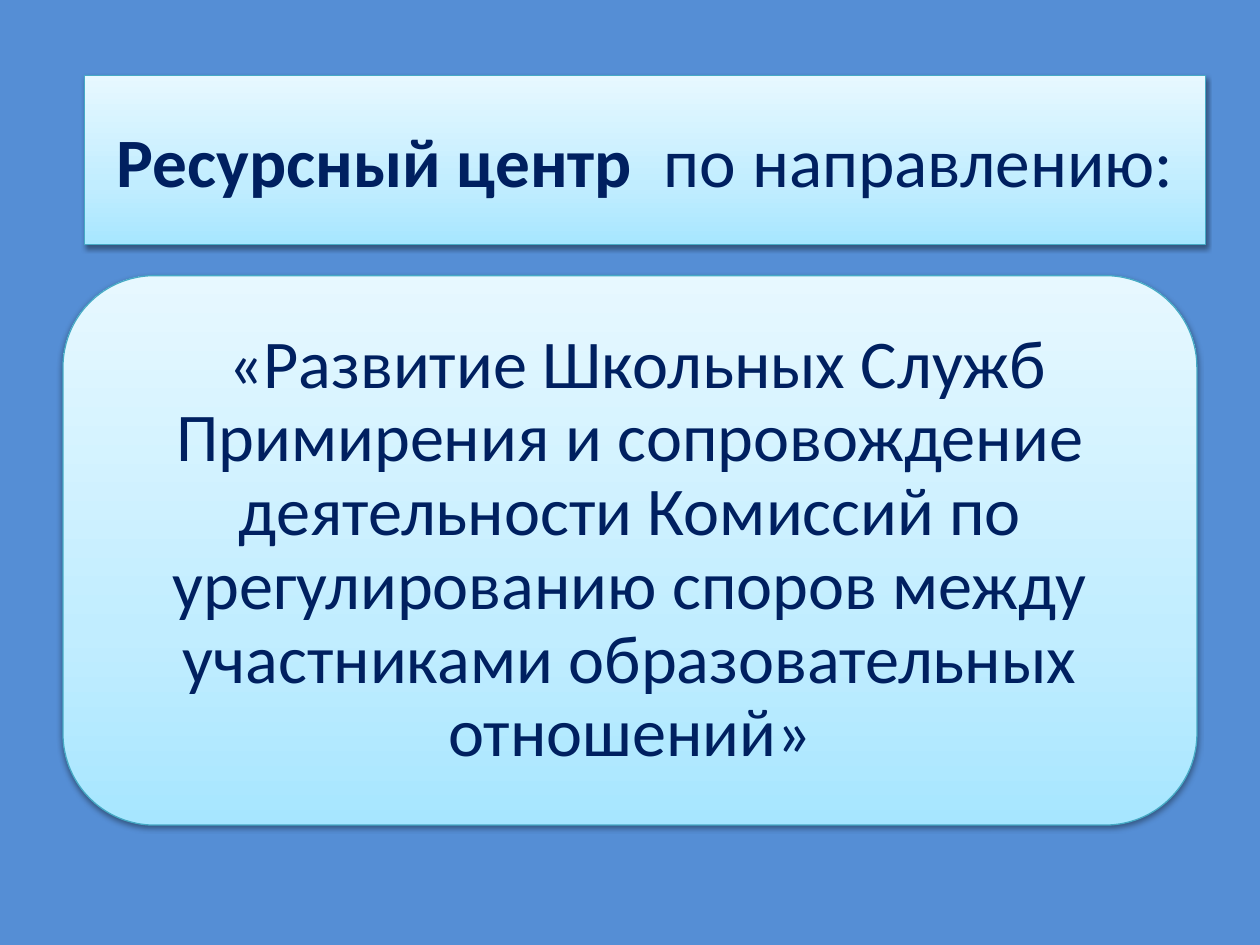
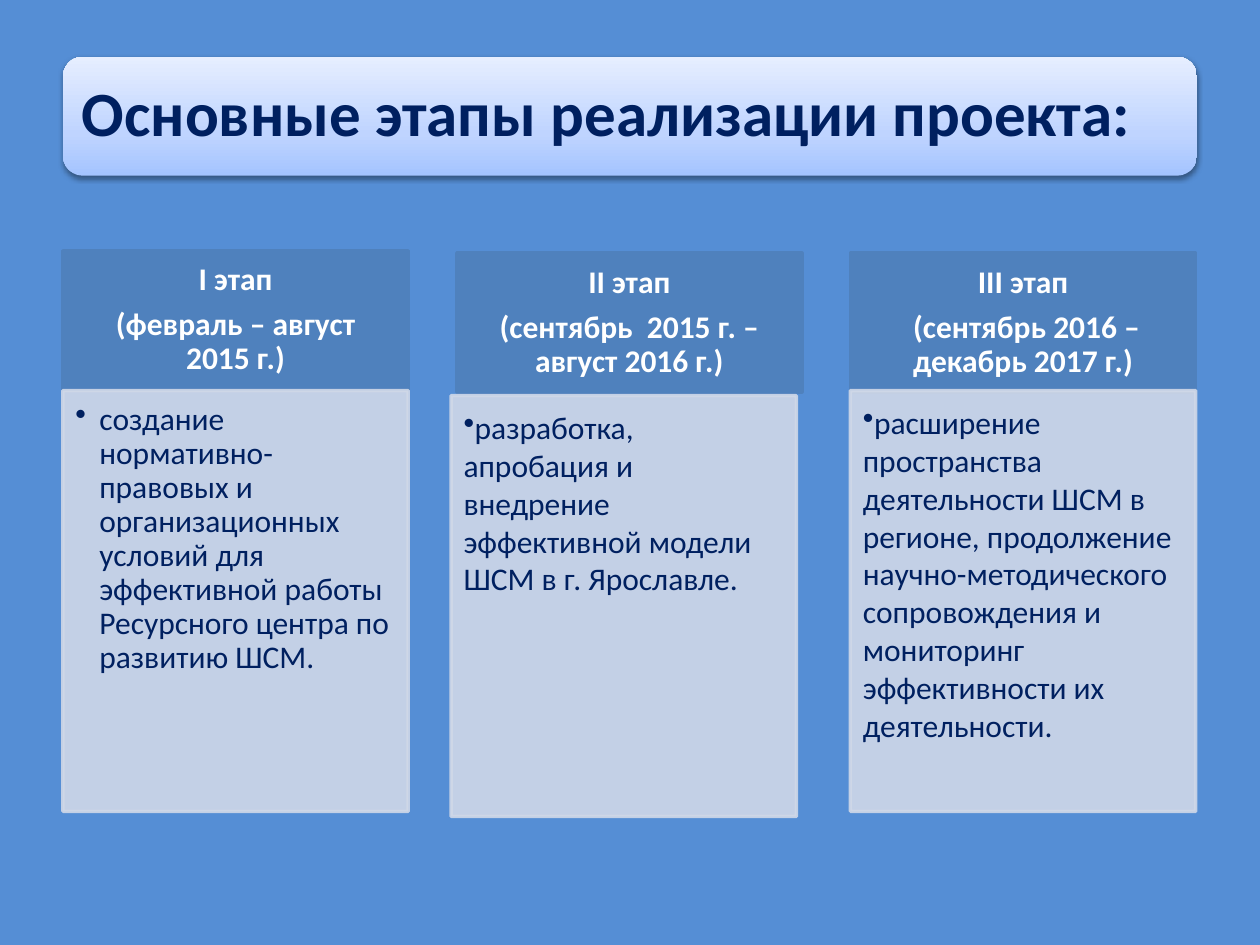
"""Build two slides on a resource centre and the stages of its project."""
from copy import deepcopy
from dataclasses import dataclass

from lxml.etree import SubElement
from pptx import Presentation
from pptx.dml.color import RGBColor as RGB
from pptx.enum.shapes import MSO_SHAPE as SHAPE
from pptx.enum.text import MSO_ANCHOR as ANCHOR, PP_ALIGN as ALIGN
from pptx.oxml.ns import qn
from pptx.util import Pt


@dataclass(frozen=True)
class Theme:
    font: str = "Calibri"
    backdrop: str = "558ED5"
    ink: str = "002060"
    white: str = "FFFFFF"
    aqua: tuple = ("A7E6FF", "C1EDFF", "E7F8FF")
    aqua_edge: str = "46AAC5"
    blue: tuple = ("A4C4FF", "BFD4FF", "E6EEFF")
    stage_head: str = "4F81BD"
    stage_body: str = "D0D8E8"
    title_size: float = 39.6
    topic_size: float = 39
    heading_size: float = 36
    stage_size: float = 18


theme = Theme()


def add_panel(slide, preset, box, colours, edge, edge_width):
    panel = slide.shapes.add_shape(preset, *map(Pt, box))
    panel.shadow.inherit = False
    if edge:
        panel.line.color.rgb = RGB.from_string(edge)
        panel.line.width = Pt(edge_width)
    else:
        panel.line.fill.background()
    if isinstance(colours, str):
        panel.fill.solid()
        panel.fill.fore_color.rgb = RGB.from_string(colours)
        return panel
    panel.fill.gradient()
    panel.fill.gradient_angle = 90
    properties = panel.element.spPr
    stop_list = properties.find(qn("a:gradFill")).find(qn("a:gsLst"))
    stop_list.append(deepcopy(stop_list[0]))
    for stop, position, colour in zip(panel.fill.gradient_stops, (0, 0.35, 1), colours):
        stop.position = position
        stop.color.rgb = RGB.from_string(colour)
    shadow = SubElement(properties.find(qn("a:effectLst")), qn("a:outerShdw"),
                        blurRad=str(Pt(3.1)), dist=str(Pt(1.6)), dir="5400000", rotWithShape="0")
    black = SubElement(shadow, qn("a:srgbClr"), val="000000")
    SubElement(black, qn("a:alpha"), val="38000")
    return panel


def write(panel, text, size, colour, bold, align, anchor, insets, spacing, gap=0):
    frame = panel.text_frame
    frame.text = text
    frame.word_wrap = True
    frame.vertical_anchor = anchor
    frame.margin_left, frame.margin_top, frame.margin_right, frame.margin_bottom = map(Pt, insets)
    for paragraph in frame.paragraphs:
        paragraph.alignment = align
        paragraph.line_spacing = spacing
        paragraph.space_after = Pt(gap)
        for run in paragraph.runs:
            run.font.name = theme.font
            run.font.size = Pt(size)
            run.font.bold = bold
            run.font.color.rgb = RGB.from_string(colour)
    return frame.paragraphs[0]


deck = Presentation()
deck.slide_width, deck.slide_height = Pt(720), Pt(540)
centre_slide, stages_slide = (deck.slides.add_slide(deck.slide_layouts[6]) for _ in range(2))
for slide in (centre_slide, stages_slide):
    slide.background.fill.solid()
    slide.background.fill.fore_color.rgb = RGB.from_string(theme.backdrop)

title = add_panel(centre_slide, SHAPE.RECTANGLE, (48.24, 43.2, 640.8, 96.5),
                  theme.aqua, theme.aqua_edge, 0.75)
title_line = write(title, "Ресурсный центр  ", theme.title_size, theme.ink, True,
                   ALIGN.CENTER, ANCHOR.MIDDLE, (7.2, 3.6, 7.2, 3.6), 1)
direction = title_line.add_run()
direction.text = "по направлению:"
direction.font.name = theme.font
direction.font.size = Pt(theme.title_size)
direction.font.bold = False
direction.font.color.rgb = RGB.from_string(theme.ink)

topic = add_panel(centre_slide, SHAPE.ROUNDED_RECTANGLE, (36, 157.5, 648, 314),
                  theme.aqua, theme.aqua_edge, 0.75)
write(topic, " «Развитие Школьных Служб Примирения и сопровождение деятельности Комиссий "
      "по урегулированию споров между участниками образовательных отношений»",
      theme.topic_size, theme.ink, False, ALIGN.CENTER, ANCHOR.MIDDLE, (0, 0, 0, 0), 0.9, 13.65)

heading = add_panel(stages_slide, SHAPE.ROUNDED_RECTANGLE, (36, 32.4, 648, 68),
                    theme.blue, None, 0)
write(heading, "Основные этапы реализации проекта:", theme.heading_size, theme.ink, True,
      ALIGN.LEFT, ANCHOR.MIDDLE, (7.5, 7.5, 7.5, 7.5), 0.9, 12.6)

stages = [
    ("I этап\n(февраль – август 2015 г.)",
     "создание нормативно-правовых и организационных условий для эффективной работы "
     "Ресурсного центра по развитию ШСМ.",
     143.3, 36, 223.2, 13.7, 0.9),
    ("II этап\n(сентябрь  2015 г. – август 2016 г.)",
     "разработка, апробация и внедрение эффективной модели ШСМ в г. Ярославле.",
     144.7, 257.8, 226.1, 0, 1),
    ("III этап\n (сентябрь 2016 – декабрь 2017 г.)",
     "расширение пространства деятельности ШСМ в регионе, продолжение "
     "научно-методического сопровождения и мониторинг эффективности их деятельности.",
     144.7, 486, 223.2, 0, 1),
]
stage_width, stage_pitch = 197.3, 225
for index, (period, task, period_top, task_left, task_top, hang, spacing) in enumerate(stages):
    period_box = (36 + index * stage_pitch, period_top, stage_width, 79.2)
    period_panel = add_panel(stages_slide, SHAPE.RECTANGLE, period_box,
                             theme.stage_head, theme.stage_head, 2)
    write(period_panel, period, theme.stage_size, theme.white, True,
          ALIGN.CENTER, ANCHOR.MIDDLE, (10, 5.8, 10, 5.8), 0.9, 6.3)

    task_panel = add_panel(stages_slide, SHAPE.RECTANGLE,
                           (task_left, task_top, stage_width, 240.5),
                           theme.stage_body, theme.stage_body, 2)
    for colour in list(task_panel.element.spPr.iter(qn("a:srgbClr"))):
        SubElement(colour, qn("a:alpha"), val="90000")
    task_line = write(task_panel, task, theme.stage_size, theme.ink, False,
                      ALIGN.LEFT, ANCHOR.TOP, (7.2, 7.2, 10, 11.5), spacing)
    bullet = task_line._p.get_or_add_pPr()
    bullet.set("marL", str(Pt(hang)))
    bullet.set("indent", str(-Pt(hang)))
    SubElement(bullet, qn("a:buChar"), char="•")

deck.save("out.pptx")
